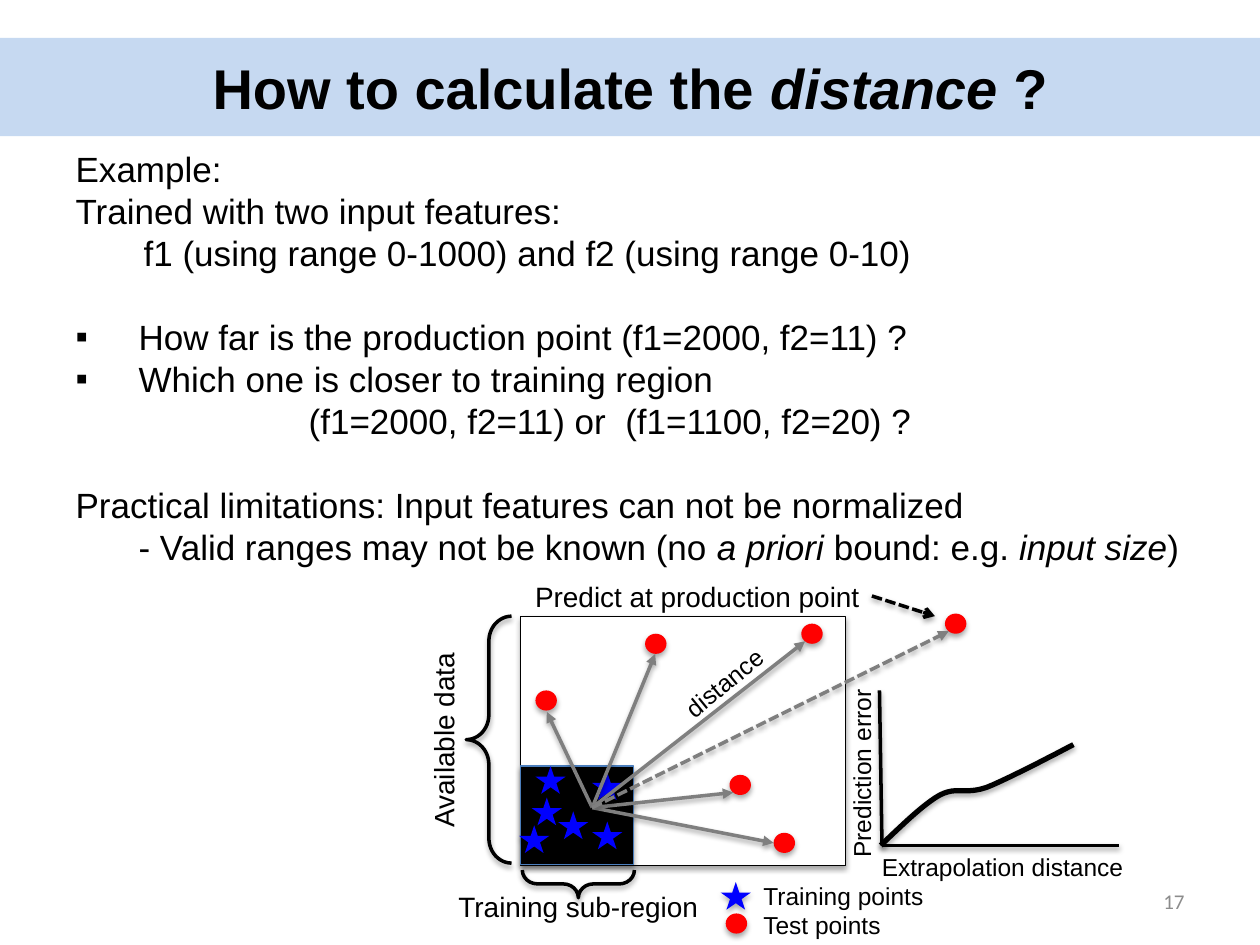
"""Build the slide on calculating the distance of a production point."""
import pptx
import pptx.dml.color
import pptx.enum.dml
import pptx.enum.shapes
import pptx.enum.text
import pptx.util
from lxml import etree
from pptx.oxml.ns import qn

Inches, Pt = pptx.util.Inches, pptx.util.Pt
RGBColor = pptx.dml.color.RGBColor
ShapeType = pptx.enum.shapes.MSO_SHAPE
Align = pptx.enum.text.PP_ALIGN
Anchor = pptx.enum.text.MSO_ANCHOR
COLORS = {
    "black": "000000", "white": "FFFFFF", "band": "C6D9F1", "training": "0000FF",
    "test": "FF0000", "arrow": "7F7F7F", "region_edge": "4B7EBC", "number": "8C8C8C",
}


def add_run(paragraph, text, *, size, font="Arial", color="black", bold=False, italic=False):
    run = paragraph.add_run()
    run.text = text
    run.font.size = Pt(size)
    run.font.name = font
    run.font.bold = bold
    run.font.italic = italic
    run.font.color.rgb = RGBColor.from_string(COLORS[color])


def style_shape(shape, *, fill=None, line=None, width=2, dashed=False, arrowhead=None):
    if line:
        shape.line.color.rgb = RGBColor.from_string(COLORS[line])
        shape.line.width = Pt(width)
    else:
        shape.line.fill.background()
    if dashed:
        shape.line.dash_style = pptx.enum.dml.MSO_LINE.SQUARE_DOT
        shape.line._ln.find(qn("a:prstDash")).set("val", "sysDash")
    if arrowhead:
        etree.SubElement(shape.line._ln, qn("a:tailEnd"), type=arrowhead)
    if fill:
        shape.fill.solid()
        shape.fill.fore_color.rgb = RGBColor.from_string(COLORS[fill])
    elif hasattr(shape, "fill"):
        shape.fill.background()
    effects = etree.SubElement(shape._element.spPr, qn("a:effectLst"))
    shadow = etree.SubElement(effects, qn("a:outerShdw"), blurRad=str(Pt(3.1)),
                              dist=str(Pt(1.8)), dir="5400000", rotWithShape="0")
    shadow_color = etree.SubElement(shadow, qn("a:srgbClr"), val=COLORS["black"])
    etree.SubElement(shadow_color, qn("a:alpha"), val="35000")


presentation = pptx.Presentation()
presentation.slide_width, presentation.slide_height = Inches(10), Inches(7.5)
slide = presentation.slides.add_slide(presentation.slide_layouts[1])
shapes = slide.shapes

title = shapes.title
title.left, title.top, title.width, title.height = map(Inches, (0, 0.3, 10, 0.78))
title.fill.solid()
title.fill.fore_color.rgb = RGBColor.from_string(COLORS["band"])
title.text_frame.vertical_anchor = Anchor.MIDDLE
title_paragraph = title.text_frame.paragraphs[0]
title_paragraph.alignment = Align.CENTER
for text, italic in (("How to calculate the ", False), ("distance ", True), ("?", False)):
    add_run(title_paragraph, text, size=32, bold=True, italic=italic)

body = slide.placeholders[1]
body.left, body.top, body.width, body.height = map(Inches, (0.5, 1.12, 9.25, 3.47))
body.text_frame.auto_size = pptx.enum.text.MSO_AUTO_SIZE.NONE
body_lines = [
    (0, False, 0, ["Example:"]),
    (0, False, 0, ["Trained with two input features:"]),
    (0.54, False, 0, ["f1 (using range 0-1000) and f2 (using range 0-10)"]),
    (0.5, True, 24, ["How far is the production point (f1=2000, f2=11) ?"]),
    (0.5, True, 0, ["Which one is closer to training region"]),
    (1.85, False, 0, ["(f1=2000, f2=11) or  (f1=1100, f2=20) ?"]),
    (0, False, 24, ["Practical limitations: Input features can not be normalized"]),
    (0.5, False, 0, ["- Valid ranges may not be known (no ", "a priori", " bound: e.g. ",
                     "input size", ")"]),
]
for index, (indent, bulleted, gap, parts) in enumerate(body_lines):
    paragraph = body.text_frame.paragraphs[0] if index == 0 else body.text_frame.add_paragraph()
    paragraph.line_spacing = Pt(24)
    paragraph.space_before = Pt(gap)
    properties = paragraph._p.get_or_add_pPr()
    properties.set("marL", str(Inches(indent)))
    properties.set("indent", str(Inches(-indent if bulleted else 0)))
    if bulleted:
        etree.SubElement(properties, qn("a:buFont"), typeface="Arial")
        etree.SubElement(properties, qn("a:buChar"), char="▪")
    else:
        etree.SubElement(properties, qn("a:buNone"))
    for position, text in enumerate(parts):
        add_run(paragraph, text, size=20, italic=position % 2 == 1)

regions = [
    ((4.13, 4.89, 2.58, 1.98), "white", "black"),
    ((4.13, 6.08, 0.9, 0.78), "black", "region_edge"),
]
for box, fill, line in regions:
    region = shapes.add_shape(ShapeType.RECTANGLE, *map(Inches, box))
    style_shape(region, fill=fill, line=line, width=0.75)

training_points = [(4.25, 6.08), (4.43, 6.44), (4.7, 6.13), (4.7, 6.52), (4.22, 6.33),
                   (4.12, 6.55), (5.72, 7)]
test_points = [(4.25, 5.48), (6.36, 4.95), (7.5, 4.87), (5.12, 5.03), (5.79, 6.15),
               (6.14, 6.61), (5.76, 7.25)]
markers = [
    (ShapeType.STAR_5_POINT, "training", 0.24, 0.22, training_points),
    (ShapeType.OVAL, "test", 0.17, 0.16, test_points),
]
for kind, fill, width, height, points in markers:
    for left, top in points:
        marker = shapes.add_shape(kind, *map(Inches, (left, top, width, height)))
        style_shape(marker, fill=fill)

center = (4.7, 6.41)
distance_ends = [(4.34, 5.65), (5.2, 5.19), (6.39, 5.09), (5.82, 6.29), (6.14, 6.69)]
origin = (7, 6.71)
lines = [(center, end, "arrow", False, "triangle") for end in distance_ends] + [
    (center, (7.53, 5.01), "arrow", True, "triangle"),
    ((6.92, 4.73), (7.42, 4.89), "black", True, "arrow"),
    (origin, (8.88, 6.71), "black", False, None),
    ((6.98, 5.48), origin, "black", False, None),
]
for start, end, color, dashed, arrowhead in lines:
    connector = shapes.add_connector(pptx.enum.shapes.MSO_CONNECTOR.STRAIGHT,
                                     *map(Inches, start + end))
    style_shape(connector, line=color, dashed=dashed, arrowhead=arrowhead)

for box, rotation in (((4.48, 6.57, 0.22, 0.89), 90), ((3.7, 4.89, 0.36, 1.96), 180)):
    brace = shapes.add_shape(ShapeType.RIGHT_BRACE, *map(Inches, box))
    brace.rotation = rotation
    brace.adjustments[0], brace.adjustments[1] = 0.55, 0.5
    style_shape(brace, line="black")

curve_segments = [
    ((6.99, 6.71), (7.16, 6.55), (7.32, 6.39), (7.46, 6.31)),
    ((7.46, 6.31), (7.6, 6.24), (7.65, 6.31), (7.83, 6.25)),
    ((7.83, 6.25), (8.01, 6.18), (8.52, 5.91), (8.52, 5.91)),
]
curve_points = []
for segment in curve_segments:
    for step in range(1, 13):
        t = step / 12
        weights = ((1 - t) ** 3, 3 * t * (1 - t) ** 2, 3 * t ** 2 * (1 - t), t ** 3)
        curve_points.append(tuple(
            Inches(sum(weight * point[axis] for weight, point in zip(weights, segment)))
            for axis in (0, 1)))
builder = shapes.build_freeform(*map(Inches, curve_segments[0][0]))
builder.add_line_segments(curve_points, close=False)
style_shape(builder.convert_to_shape(), line="black", width=3)

labels = [
    (["Training points", "Test points"], (5.96, 6.94, 1.97, 0.56), 14, Align.LEFT, 0),
    (["Training sub-region"], (3.54, 7.01, 2.11, 0.36), 16, Align.LEFT, 0),
    (["Available data"], (2.67, 5.69, 1.7, 0.37), 16, Align.CENTER, 270),
    (["Predict at production point"], (3.48, 4.55, 3.44, 0.36), 16, Align.RIGHT, 0),
    (["distance"], (5.28, 5.24, 0.96, 0.33), 14, Align.LEFT, 320.9),
    (["Extrapolation distance"], (6.9, 6.71, 2.27, 0.33), 14, Align.LEFT, 0),
    (["Prediction error"], (6, 5.97, 1.68, 0.34), 14, Align.CENTER, 270),
    (["17"], (7.17, 6.95, 2.33, 0.4), 12, Align.RIGHT, 0),
]
for texts, box, size, alignment, rotation in labels:
    label = shapes.add_textbox(*map(Inches, box))
    label.rotation = rotation
    label.text_frame.word_wrap = True
    is_number = texts == ["17"]
    label.text_frame.vertical_anchor = Anchor.MIDDLE if is_number else Anchor.TOP
    for index, text in enumerate(texts):
        paragraph = label.text_frame.paragraphs[0] if index == 0 else label.text_frame.add_paragraph()
        paragraph.alignment = alignment
        add_run(paragraph, text, size=size, font="Calibri" if is_number else "Arial",
                color="number" if is_number else "black")

presentation.save("out.pptx")
